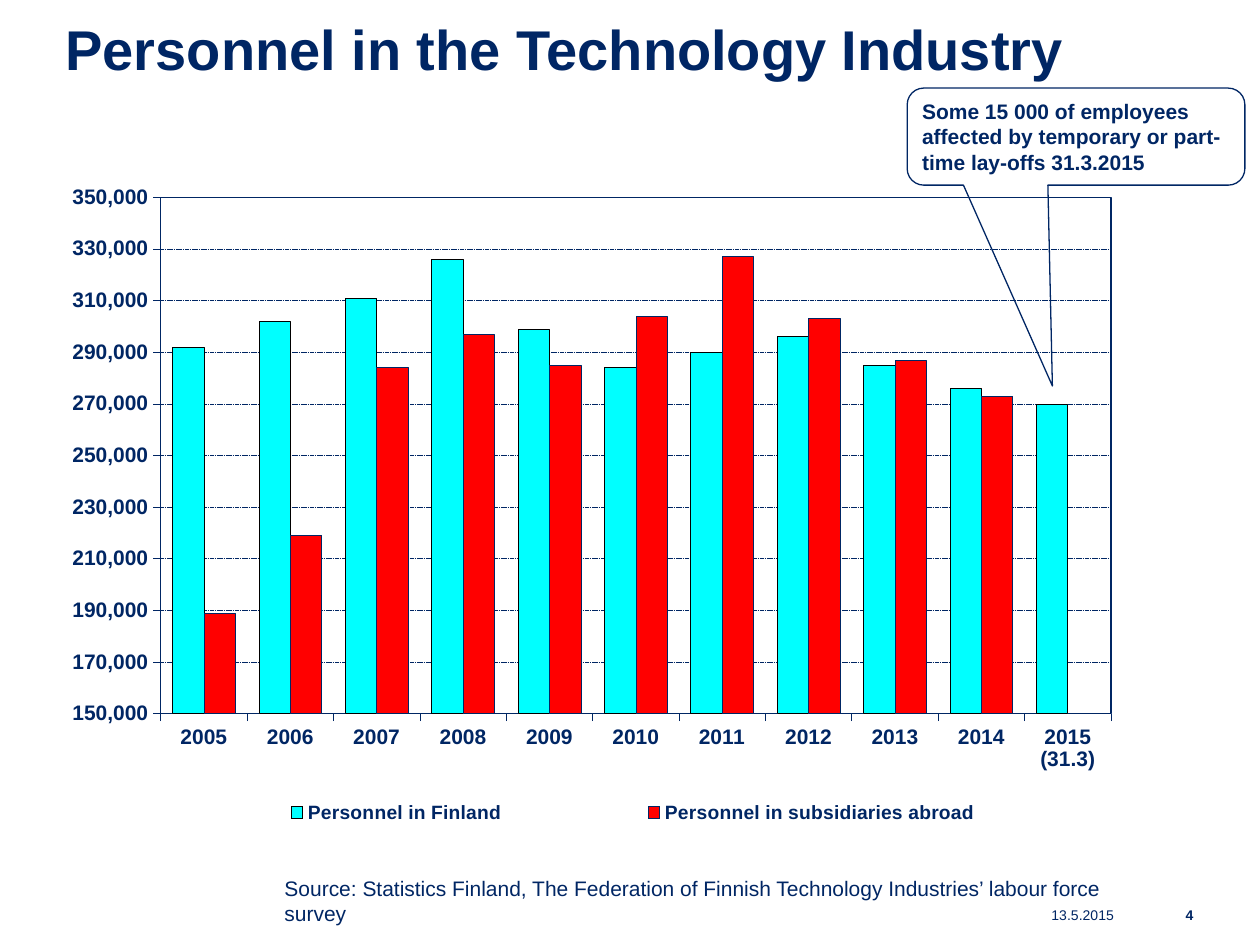
from lxml.etree import SubElement
from pptx import Presentation
from pptx.chart.data import CategoryChartData
from pptx.dml.color import RGBColor
from pptx.enum.chart import XL_CHART_TYPE as ChartType
from pptx.enum.chart import XL_LEGEND_POSITION as LegendPosition
from pptx.enum.chart import XL_TICK_MARK as TickMark
from pptx.enum.dml import MSO_LINE_DASH_STYLE as Dash
from pptx.enum.shapes import MSO_SHAPE as Shape
from pptx.enum.text import MSO_ANCHOR as Anchor
from pptx.enum.text import PP_ALIGN as Align
from pptx.oxml import parse_xml
from pptx.oxml.ns import nsdecls, qn
from pptx.util import Inches, Pt

WIDTH, HEIGHT = Inches(10), Inches(7.5)
NAVY, CYAN, RED, BLACK, WHITE = "002664", "00FFFF", "FF0000", "000000", "FFFFFF"
YEARS = [str(year) for year in range(2005, 2015)] + ["2015 (31.3)"]
SERIES = [
    ("Personnel in Finland", CYAN, BLACK,
     [292, 302, 311, 326, 299, 284, 290, 296, 285, 276, 270]),
    ("Personnel in subsidiaries abroad", RED, NAVY,
     [189, 219, 284, 297, 285, 304, 327, 303, 287, 273, None]),
]


def color(code):
    """Turn a hex string into a colour."""
    return RGBColor.from_string(code)


def area(left, top, width, height):
    """Turn percentages of the slide into a position and size."""
    return (int(WIDTH * left / 100), int(HEIGHT * top / 100),
            int(WIDTH * width / 100), int(HEIGHT * height / 100))


def style_font(font, size, bold=False):
    """Apply the slide's typeface and colour."""
    font.name, font.size, font.bold = "Arial", Pt(size), bold
    font.color.rgb = color(NAVY)


def style_line(line, code=NAVY, width=0.25):
    """Set a line's colour and width."""
    line.color.rgb = color(code)
    line.width = Pt(width)


def write(shape, lines, size, bold=False, align=Align.LEFT, anchor=Anchor.TOP):
    """Fill a shape with one paragraph per line."""
    frame = shape.text_frame
    frame.word_wrap = True
    frame.vertical_anchor = anchor
    frame.text = "\n".join(lines)
    for para in frame.paragraphs:
        para.alignment = align
        style_font(para.font, size, bold)


def add_text(page, place, text, size, **style):
    """Add a text box with a single paragraph."""
    write(page.shapes.add_textbox(*area(*place)), [text], size, **style)


def add_title(page, text):
    """Place and format the title."""
    title = page.shapes.title
    title.left, title.top, title.width, title.height = area(4.2, 0, 91.5, 9.33)
    write(title, [text], 32, bold=True, anchor=Anchor.BOTTOM)


def add_callout(page, lines):
    """Add the callout that points at the last column."""
    callout = page.shapes.add_shape(
        Shape.ROUNDED_RECTANGULAR_CALLOUT, *area(72, 9.33, 26.8, 10.27))
    callout.shadow.inherit = False
    callout.fill.background()
    style_line(callout.line, width=0.75)
    for index, value in enumerate((-0.07, 2.57, 0.17)):
        callout.adjustments[index] = value
    write(callout, lines, 12, bold=True, anchor=Anchor.MIDDLE)
    frame = callout.text_frame
    frame.word_wrap = False
    frame.margin_left = Inches(0.08)


def set_layout(element, left, top, width, height, inner=False):
    """Give a chart part a manual layout in shares of the chart."""
    old = element.find(qn("c:layout"))
    if old is not None:
        element.remove(old)
    layout = parse_xml(f"<c:layout {nsdecls('c')}/>")
    manual = SubElement(layout, qn("c:manualLayout"))
    settings = [("layoutTarget", "inner")] if inner else []
    settings += [("xMode", "edge"), ("yMode", "edge"),
                 ("x", left), ("y", top), ("w", width), ("h", height)]
    for name, value in settings:
        SubElement(manual, qn(f"c:{name}")).set("val", str(value))
    before = element.find(qn("c:legendPos"))
    element.insert(0 if before is None else element.index(before) + 1, layout)


def frame_plot(plot_area):
    """Outline the plot area."""
    plot_area.append(parse_xml(
        f'<c:spPr {nsdecls("c", "a")}><a:noFill/><a:ln w="9525"><a:solidFill>'
        f'<a:srgbClr val="{NAVY}"/></a:solidFill></a:ln></c:spPr>'))


def style_axes(chart):
    """Format both axes and the gridlines."""
    for axis in (chart.category_axis, chart.value_axis):
        axis.major_tick_mark = TickMark.OUTSIDE
        style_line(axis.format.line)
        style_font(axis.tick_labels.font, 12, bold=True)
    values = chart.value_axis
    values.minimum_scale, values.maximum_scale = 150000, 350000
    values.major_unit = 20000
    values.tick_labels.number_format = "#,##0"
    values.tick_labels.number_format_is_linked = False
    grid = values.major_gridlines.format.line
    style_line(grid)
    grid.dash_style = Dash.SQUARE_DOT


def add_personnel_chart(page):
    """Add the clustered columns with their legend."""
    data = CategoryChartData()
    data.categories = YEARS
    for name, _, _, thousands in SERIES:
        data.add_series(name, [n and n * 1000 for n in thousands])
    chart = page.shapes.add_chart(
        ChartType.COLUMN_CLUSTERED, *area(5.1, 17.2, 86, 74.8), data).chart
    chart.has_title = False
    style_font(chart.font, 12, bold=True)
    style_axes(chart)
    plot = chart.plots[0]
    plot.gap_width, plot.overlap = 75, 0
    plot.vary_by_categories = False
    for series, (_, fill, outline, _) in zip(plot.series, SERIES):
        series.invert_if_negative = False
        series.format.fill.solid()
        series.format.fill.fore_color.rgb = color(fill)
        style_line(series.format.line, outline)
    chart.has_legend = True
    legend = chart.legend
    legend.position = LegendPosition.BOTTOM
    legend.include_in_layout = False
    style_font(legend.font, 11, bold=True)
    plot_area = chart.element.find(".//" + qn("c:plotArea"))
    set_layout(plot_area, 0.089, 0.049, 0.877, 0.731, inner=True)
    set_layout(chart.element.find(".//" + qn("c:legend")), 0.08, 0.89, 0.89, 0.06)
    frame_plot(plot_area)


def main():
    """Build the slide and save it."""
    deck = Presentation()
    deck.slide_width, deck.slide_height = WIDTH, HEIGHT
    page = deck.slides.add_slide(deck.slide_layouts[5])
    page.background.fill.solid()
    page.background.fill.fore_color.rgb = color(WHITE)
    add_title(page, "Personnel in the Technology Industry")
    add_personnel_chart(page)
    add_text(page, (21.6, 92, 67.4, 6.67),
             "Source: Statistics Finland, The Federation of Finnish "
             "Technology Industries’ labour force survey", 12)
    add_callout(page, ["Some 15 000 of employees",
                       "affected by temporary or part-",
                       "time lay-offs 31.3.2015"])
    footer = {"align": Align.RIGHT, "anchor": Anchor.MIDDLE}
    add_text(page, (61, 95.2, 28.4, 3.2), "13.5.2015", 8, **footer)
    add_text(page, (89.4, 95.2, 6.3, 3.2), "4", 8, bold=True, **footer)
    deck.save("out.pptx")


if __name__ == "__main__":
    main()
